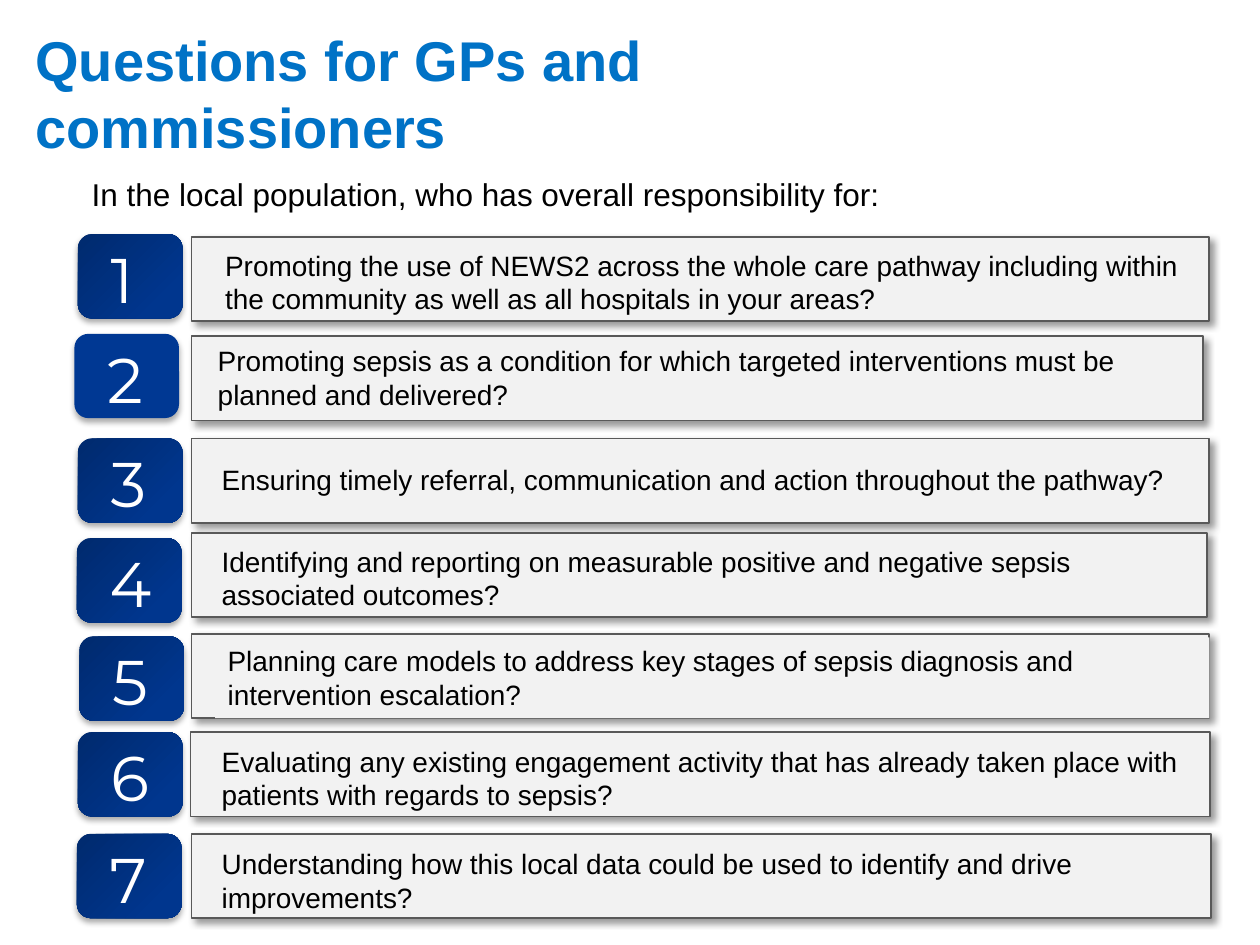
import pptx
import pptx.util
import pptx.dml.color
import pptx.enum.shapes
import pptx.enum.text
import pptx.oxml
from pptx.oxml.ns import nsdecls

Cm, Pt = pptx.util.Cm, pptx.util.Pt
Kind = pptx.enum.shapes.MSO_SHAPE
Anchor = pptx.enum.text.MSO_ANCHOR
Align = pptx.enum.text.PP_ALIGN
Size = pptx.enum.text.MSO_AUTO_SIZE

# Content
TITLE = "Questions for GPs and commissioners"
LEAD = "In the local population, who has overall responsibility for:"
# question, badge (x, y), panel (x, y, w), text (x, y, w, h), text has fill
ROWS = [
    ("Promoting the use of NEWS2 across the whole care pathway including "
     "within the community as well as all hospitals in your areas?",
     (1.57, 4.72), (3.86, 4.78, 20.52), (4.29, 4.88, 20.04, 1.63), False),
    ("Promoting sepsis as a condition for which targeted interventions must "
     "be planned and delivered?",
     (1.5, 6.73), (3.86, 6.78, 20.4), (4.14, 6.81, 19.89, 1.63), True),
    ("Ensuring timely referral, communication and action throughout the "
     "pathway?",
     (1.57, 8.84), (3.86, 8.84, 20.52), (4.22, 9.19, 20.12, 0.94), True),
    ("Identifying and reporting on measurable positive and negative sepsis "
     "associated outcomes?",
     (1.55, 10.85), (3.86, 10.74, 20.47), (4.22, 10.85, 20.09, 1.63), False),
    ("Planning care models to address key stages of sepsis diagnosis and "
     "intervention escalation?",
     (1.6, 12.83), (3.86, 12.78, 20.52), (4.34, 12.85, 20.04, 1.63), True),
    ("Evaluating any existing engagement activity that has already taken "
     "place with patients with regards to sepsis?",
     (1.57, 14.76), (3.84, 14.76, 20.55), (4.22, 14.88, 20.17, 1.63), False),
    ("Understanding how this local data could be used to identify and drive "
     "improvements?",
     (1.55, 16.81), (3.86, 16.81, 20.55), (4.22, 16.94, 20.19, 1.63), False),
]
FLAT = 2  # the badge with a plain fill

# Colours, fonts and type sizes
THEME = {
    "title": "0072C6", "ink": "000000", "white": "FFFFFF",
    "panel": "F2F2F2", "edge": "595959",
    "blue": "003893", "dark": "002A6E", "light": "00368E",
    "font": "Arial", "digit": "Montserrat",
    "big": 36, "head": 32, "lead": 18, "body": 16,
}
BADGE_W, TALL = 2.11, 1.7


def color(name):
    return pptx.dml.color.RGBColor.from_string(THEME[name])


def write(shape, text, size="body", ink="ink", font="font", bold=False,
          wrap=True, fit=Size.SHAPE_TO_FIT_TEXT, anchor=Anchor.TOP):
    frame = shape.text_frame
    frame.text = text
    frame.word_wrap = wrap
    frame.auto_size = fit
    frame.vertical_anchor = anchor
    para = frame.paragraphs[0]
    para.alignment = Align.LEFT
    face = para.runs[0].font
    face.name, face.size, face.bold = THEME[font], Pt(THEME[size]), bold
    face.color.rgb = color(ink)


def place(shape, *box):
    shape.left, shape.top, shape.width, shape.height = map(Cm, box)


def shade(shape, blur, dist, angle, alpha):
    shape.shadow.inherit = False
    effect = shape._element.spPr.find(pptx.oxml.ns.qn("a:effectLst"))
    effect.append(pptx.oxml.parse_xml(
        f'<a:outerShdw {nsdecls("a")} blurRad="{Pt(blur)}" dist="{Pt(dist)}" '
        f'dir="{angle * 60000}" algn="tl" rotWithShape="0">'
        f'<a:srgbClr val="{THEME["ink"]}"><a:alpha val="{alpha * 1000}"/>'
        '</a:srgbClr></a:outerShdw>'))


def badge(slide, num, x, y):
    group = slide.shapes.add_group_shape().shapes
    tile = group.add_shape(Kind.ROUNDED_RECTANGLE,
                           *map(Cm, (x, y, BADGE_W, TALL)))
    tile.line.fill.background()
    if num == FLAT:
        tile.fill.solid()
        tile.fill.fore_color.rgb = color("blue")
    else:
        tile.fill.gradient()
        tile.fill.gradient_angle = 315
        start, end = tile.fill.gradient_stops
        start.color.rgb, end.color.rgb = color("dark"), color("light")
        start.position, end.position = 0, 0.8
    shade(tile, 3.5, 2.2, 90, 32)
    wide = 1.37 if num > 5 else 1.22
    digit = group.add_textbox(*map(Cm, (x + 0.41, y, wide, 1.8)))
    write(digit, str(num), size="big", ink="white", font="digit", wrap=False)


def panel(slide, text, frame, box, filled):
    group = slide.shapes.add_group_shape().shapes
    back = group.add_shape(Kind.RECTANGLE, *map(Cm, (*frame, TALL)))
    back.fill.solid()
    back.fill.fore_color.rgb = color("panel")
    back.line.color.rgb = color("edge")
    back.line.width = Pt(1)
    shade(back, 4, 3, 45, 40)
    label = group.add_textbox(*map(Cm, box))
    if filled:
        label.fill.solid()
        label.fill.fore_color.rgb = color("panel")
    write(label, text)


def main():
    deck = pptx.Presentation()
    deck.slide_width, deck.slide_height = Cm(25.4), Cm(19.05)
    slide = deck.slides.add_slide(deck.slide_layouts[5])

    # Heading and lead-in
    title = slide.shapes.title
    place(title, 0.46, 0.94, 21.3, 1.85)
    write(title, TITLE, size="head", ink="title", bold=True,
          fit=Size.NONE, anchor=Anchor.MIDDLE)
    lead = slide.shapes.add_textbox(*map(Cm, (1.6, 3.4, 19.02, 1.02)))
    write(lead, LEAD, size="lead")

    # Numbered questions
    for num, (text, spot, frame, box, filled) in enumerate(ROWS, 1):
        badge(slide, num, *spot)
        panel(slide, text, frame, box, filled)

    deck.save("out.pptx")


if __name__ == "__main__":
    main()
